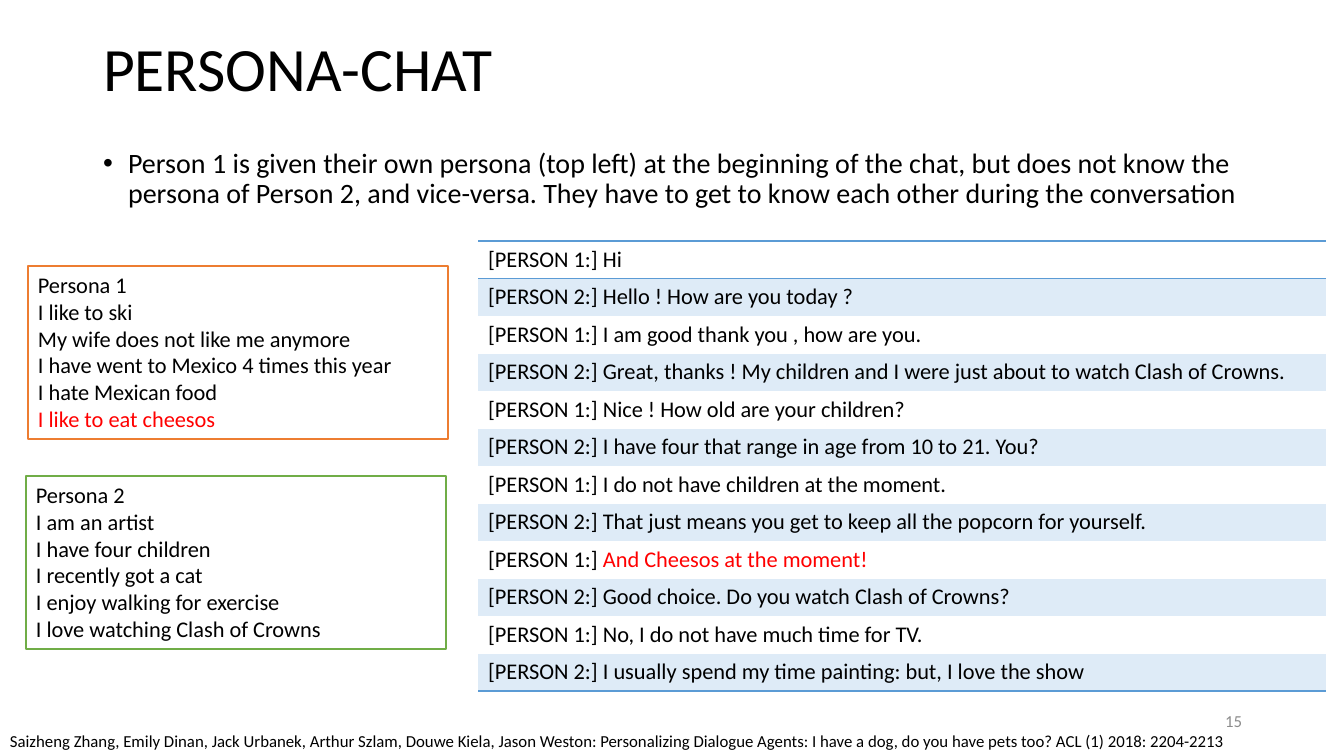
from lxml import etree
from pptx import Presentation
from pptx.dml.color import RGBColor
from pptx.enum.text import MSO_ANCHOR, MSO_AUTO_SIZE, PP_ALIGN
from pptx.oxml.ns import qn
from pptx.util import Pt

BLACK = RGBColor(0x00, 0x00, 0x00)
WHITE = RGBColor(0xFF, 0xFF, 0xFF)
RED = RGBColor(0xFF, 0x00, 0x00)
GREY = RGBColor(0x8C, 0x8C, 0x8C)
ORANGE = RGBColor(0xED, 0x7D, 0x31)
GREEN = RGBColor(0x70, 0xAD, 0x47)
BLUE = RGBColor(0x5B, 0x9B, 0xD5)
PALE_BLUE = RGBColor(0xDE, 0xEB, 0xF7)
LEFT, RIGHT = PP_ALIGN.LEFT, PP_ALIGN.RIGHT
TOP, MIDDLE = MSO_ANCHOR.TOP, MSO_ANCHOR.MIDDLE
NO_AUTOFIT = MSO_AUTO_SIZE.NONE
RECTANGLE = 1
FONT = "Calibri"
PLAIN_TABLE_STYLE = "{2D5ABB26-0587-4C30-8999-92F81FD0307C}"
EMU_PER_PX = 914400 / 100.8

SLIDE_SIZE = (1344, 756)
TITLE = "PERSONA-CHAT"
TITLE_BOX = (93, 0, 1159, 144)
BODY = ("Person 1 is given their own persona (top left) at the beginning of the chat, "
        "but does not know the persona of Person 2, and vice-versa. They have to get to "
        "know each other during the conversation")
BODY_BOX = (93, 144, 1159, 444)
BODY_INDENT = 25
PERSONAS = [
    ((28, 266, 420, 173), ORANGE, [
        "Persona 1",
        "I like to ski",
        "My wife does not like me anymore",
        "I have went to Mexico 4 times this year",
        "I hate Mexican food",
        "I like to eat cheesos",
    ]),
    ((26, 476, 420, 173), GREEN, [
        "Persona 2",
        "I am an artist",
        "I have four children",
        "I recently got a cat",
        "I enjoy walking for exercise",
        "I love watching Clash of Crowns",
    ]),
]
CHAT = [
    "Hi",
    "Hello ! How are you today ?",
    "I am good thank you , how are you.",
    "Great, thanks ! My children and I were just about to watch Clash of Crowns.",
    "Nice ! How old are your children?",
    "I have four that range in age from 10 to 21. You?",
    "I do not have children at the moment.",
    "That just means you get to keep all the popcorn for yourself.",
    "And Cheesos at the moment!",
    "Good choice. Do you watch Clash of Crowns?",
    "No, I do not have much time for TV.",
    "I usually spend my time painting: but, I love the show",
]
RED_LINES = {"I like to eat cheesos", "And Cheesos at the moment!"}
CHAT_LEFT, CHAT_TOP, CHAT_WIDTH, CHAT_ROW = 478, 241, 848, 37
SMALL_TEXTS = [
    ("15", (950, 701, 302, 40), GREY, RIGHT, MIDDLE),
    ("Saizheng Zhang, Emily Dinan, Jack Urbanek, Arthur Szlam, Douwe Kiela, Jason Weston: "
     "Personalizing Dialogue Agents: I have a dog, do you have pets too? "
     "ACL (1) 2018: 2204-2213", (0, 726, 1344, 30), BLACK, LEFT, TOP),
]


def px(length):
    return round(length * EMU_PER_PX)


def emu(box):
    return [px(length) for length in box]


def style(paragraph, size, color=BLACK, align=LEFT):
    paragraph.alignment = align
    font = paragraph.font
    font.name, font.size, font.color.rgb = FONT, Pt(size), color


def fill_placeholder(placeholder, text, box, size, anchor):
    placeholder.left, placeholder.top, placeholder.width, placeholder.height = emu(box)
    frame = placeholder.text_frame
    frame.text = text
    frame.auto_size = NO_AUTOFIT
    frame.vertical_anchor = anchor
    paragraph = frame.paragraphs[0]
    paragraph.line_spacing = 0.9
    paragraph.space_before = Pt(0)
    return paragraph


def add_persona(slide, box, color, lines):
    shape = slide.shapes.add_shape(RECTANGLE, *emu(box))
    shape.shadow.inherit = False
    shape.fill.solid()
    shape.fill.fore_color.rgb = WHITE
    shape.line.color.rgb = color
    shape.line.width = Pt(1)
    frame = shape.text_frame
    frame.word_wrap = True
    frame.vertical_anchor = TOP
    frame.text = "\n".join(lines)
    for paragraph in frame.paragraphs:
        style(paragraph, 16, RED if paragraph.text in RED_LINES else BLACK)


def add_border(cell, side):
    line = etree.SubElement(cell._tc.get_or_add_tcPr(), qn("a:" + side), w=str(Pt(1)))
    solid = etree.SubElement(line, qn("a:solidFill"))
    etree.SubElement(solid, qn("a:srgbClr"), val=str(BLUE))


def add_chat(slide):
    box = (CHAT_LEFT, CHAT_TOP, CHAT_WIDTH, CHAT_ROW * len(CHAT))
    table = slide.shapes.add_table(len(CHAT), 1, *emu(box)).table
    table.first_row = table.horz_banding = False
    table._tbl.tblPr.find(qn("a:tableStyleId")).text = PLAIN_TABLE_STYLE
    for index, line in enumerate(CHAT):
        table.rows[index].height = px(CHAT_ROW)
        cell = table.cell(index, 0)
        if index == 0:
            add_border(cell, "lnT")
        if index in (0, len(CHAT) - 1):
            add_border(cell, "lnB")
        if index % 2:
            cell.fill.solid()
            cell.fill.fore_color.rgb = PALE_BLUE
        else:
            cell.fill.background()
        paragraph = cell.text_frame.paragraphs[0]
        style(paragraph, 16)
        paragraph.add_run().text = f"[PERSON {index % 2 + 1}:] "
        words = paragraph.add_run()
        words.text = line
        if line in RED_LINES:
            words.font.color.rgb = RED


def add_small_text(slide, text, box, color, align, anchor):
    frame = slide.shapes.add_textbox(*emu(box)).text_frame
    frame.word_wrap = True
    frame.vertical_anchor = anchor
    frame.text = text
    style(frame.paragraphs[0], 12, color, align)


def main():
    """Build the persona chat slide and save it."""
    presentation = Presentation()
    presentation.slide_width, presentation.slide_height = emu(SLIDE_SIZE)
    slide = presentation.slides.add_slide(presentation.slide_layouts[1])
    title, body = slide.placeholders
    style(fill_placeholder(title, TITLE, TITLE_BOX, 44, MIDDLE), 44)
    paragraph = fill_placeholder(body, BODY, BODY_BOX, 20, TOP)
    properties = paragraph._p.get_or_add_pPr()
    properties.set("marL", str(px(BODY_INDENT)))
    properties.set("indent", str(-px(BODY_INDENT)))
    etree.SubElement(properties, qn("a:buFont"), typeface="Arial")
    etree.SubElement(properties, qn("a:buChar"), char="•")
    style(paragraph, 20)
    for persona in PERSONAS:
        add_persona(slide, *persona)
    add_chat(slide)
    for small_text in SMALL_TEXTS:
        add_small_text(slide, *small_text)
    presentation.save("out.pptx")


if __name__ == "__main__":
    main()
